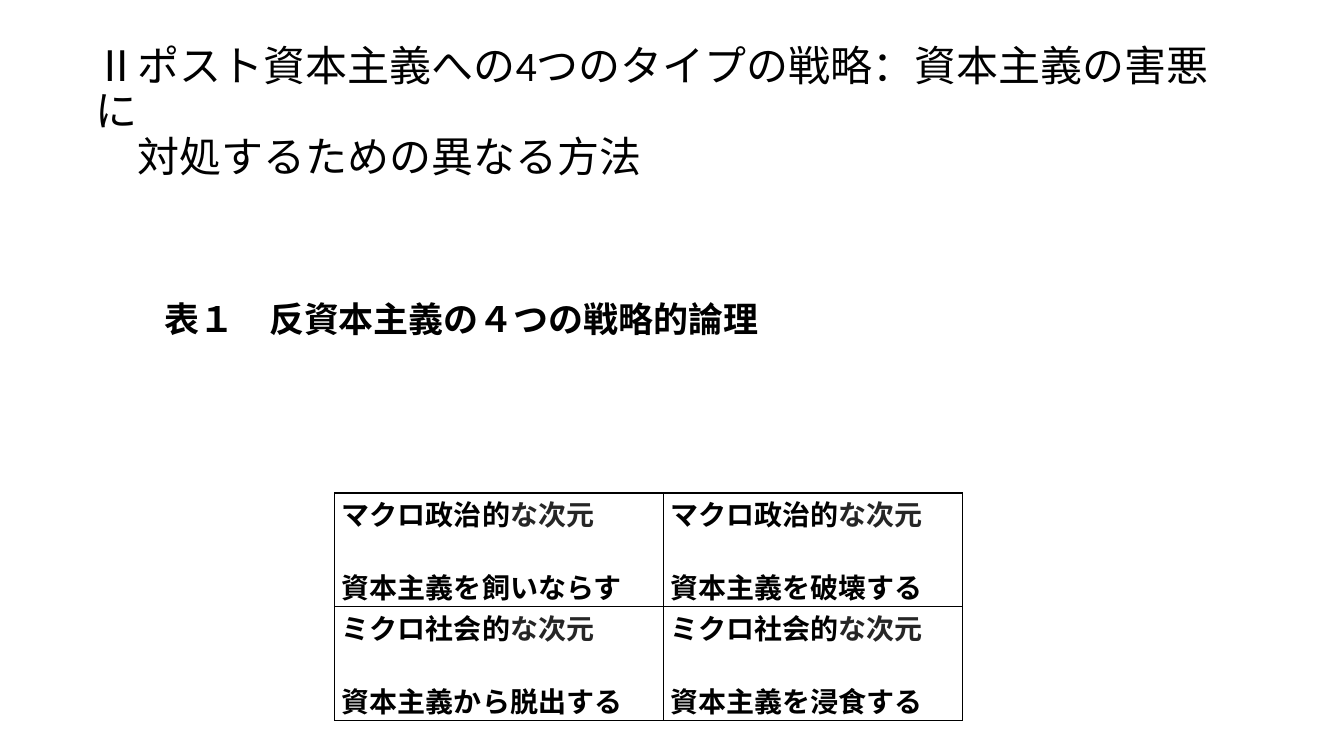
from dataclasses import dataclass

from lxml.etree import SubElement
from pptx import Presentation
from pptx.dml.color import RGBColor
from pptx.enum.text import MSO_ANCHOR, PP_ALIGN
from pptx.oxml.ns import qn
from pptx.util import Inches, Pt


@dataclass(frozen=True)
class Theme:
    """Colours, fonts and sizes of the slide."""
    black: str = "000000"
    gray: str = "262626"
    heading_font: str = "Calibri"
    body_font: str = "Cambria"
    title_size: float = 30
    caption_size: float = 25
    cell_size: float = 20
    cell_gap: float = 23.4
    border: float = 1


THEME = Theme()
TITLE = ("Ⅱポスト資本主義への4つのタイプの戦略：資本主義の害悪に", "対処するための異なる方法")
CAPTION = "表１　反資本主義の４つの戦略的論理"
STRATEGIES = (
    ("マクロ政治的", ("資本主義を飼いならす", "資本主義を破壊する")),
    ("ミクロ社会的", ("資本主義から脱出する", "資本主義を浸食する")),
)
DIMENSION = "な次元"


def add_text(paragraph, text, *, font=THEME.body_font, size=THEME.cell_size,
             color=THEME.black, bold=True):
    """Append a formatted run to a paragraph."""
    run = paragraph.add_run()
    run.text = text
    run.font.name = font
    run.font.size = Pt(size)
    run.font.bold = bold
    run.font.color.rgb = RGBColor.from_string(color)


def add_text_frame(slide, box, anchor):
    """Add a wrapping text box and return its text frame."""
    frame = slide.shapes.add_textbox(*map(Inches, box)).text_frame
    frame.word_wrap = True
    frame.vertical_anchor = anchor
    return frame


def add_title(slide, box):
    """Place the title, with its second line indented by one character."""
    frame = add_text_frame(slide, box, MSO_ANCHOR.MIDDLE)
    first, second = frame.paragraphs[0], frame.add_paragraph()
    second._p.get_or_add_pPr().set("marL", str(Pt(THEME.title_size)))
    for paragraph, text in zip((first, second), TITLE):
        paragraph.line_spacing = 0.9
        add_text(paragraph, text, font=THEME.heading_font,
                 size=THEME.title_size, bold=False)


def add_caption(slide, box):
    """Place the caption of the table."""
    frame = add_text_frame(slide, box, MSO_ANCHOR.TOP)
    add_text(frame.paragraphs[0], CAPTION, size=THEME.caption_size)


def set_borders(cell):
    """Draw a thin line on all four sides of a cell."""
    properties = cell._tc.get_or_add_tcPr()
    for side in ("a:lnL", "a:lnR", "a:lnT", "a:lnB"):
        line = SubElement(properties, qn(side), w=str(Pt(THEME.border)))
        fill = SubElement(line, qn("a:solidFill"))
        SubElement(fill, qn("a:srgbClr"), val=THEME.black)


def fill_cell(cell, level, strategy):
    """Write the dimension and the strategy into a cell."""
    cell.margin_left = cell.margin_right = Inches(0.07)
    cell.margin_top = cell.margin_bottom = 0
    set_borders(cell)
    cell.fill.background()
    heading = cell.text_frame.paragraphs[0]
    add_text(heading, level)
    add_text(heading, DIMENSION, color=THEME.gray)
    detail = cell.text_frame.add_paragraph()
    detail.space_before = Pt(THEME.cell_gap)
    add_text(detail, strategy)
    for paragraph in (heading, detail):
        paragraph.alignment = PP_ALIGN.JUSTIFY


def add_strategy_table(slide, box, column_widths):
    """Place the table of four strategies."""
    table = slide.shapes.add_table(
        len(STRATEGIES), len(column_widths), *map(Inches, box)).table
    table.first_row = table.horz_banding = False
    for column, width in zip(table.columns, column_widths):
        column.width = Inches(width)
    for row, (level, strategies) in zip(table.rows, STRATEGIES):
        for cell, strategy in zip(row.cells, strategies):
            fill_cell(cell, level, strategy)


def main():
    """Build and save the presentation."""
    presentation = Presentation()
    presentation.slide_width = Inches(13.33)
    presentation.slide_height = Inches(7.5)
    slide = presentation.slides.add_slide(presentation.slide_layouts[6])
    add_title(slide, (0.85, 0.4, 11.5, 1.45))
    add_strategy_table(slide, (3.32, 4.89, 6.23, 2.26), (3.26, 2.97))
    add_caption(slide, (1.53, 2.9, 6.19, 0.94))
    presentation.save("out.pptx")


if __name__ == "__main__":
    main()
